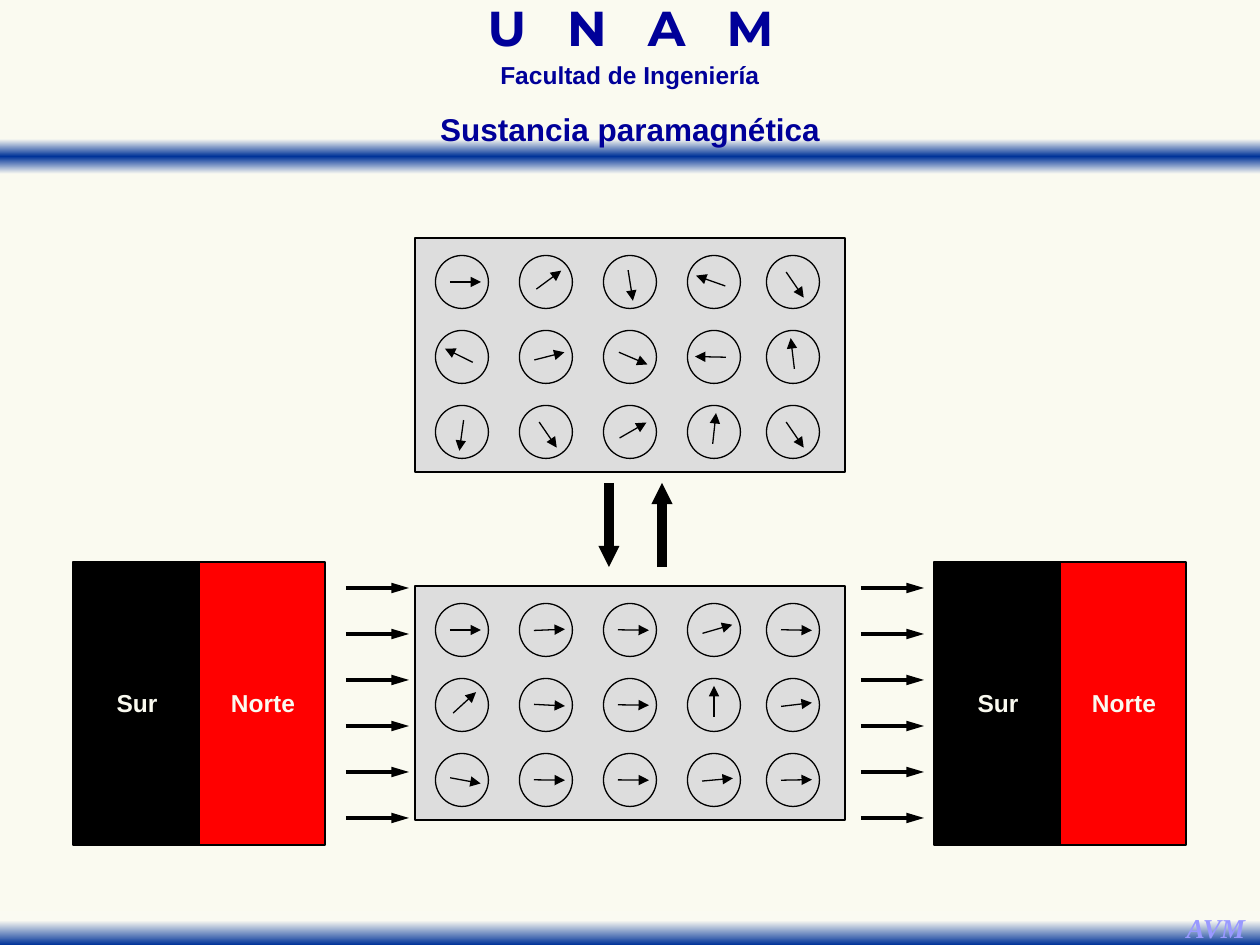
from dataclasses import dataclass
from math import cos, radians, sin

from lxml import etree
from pptx import Presentation
from pptx.dml.color import RGBColor
from pptx.enum.shapes import MSO_CONNECTOR as Connector, MSO_SHAPE as Preset
from pptx.enum.text import PP_ALIGN as Align
from pptx.oxml import parse_xml
from pptx.oxml.ns import nsdecls, qn
from pptx.util import Pt

SCALE = 914400 / 126


@dataclass(frozen=True)
class Theme:
    background: str = "FAFAF0"
    band_light: str = "FAFAF2"
    band_dark: str = "003399"
    heading: str = "000099"
    signature: str = "9999FF"
    ink: str = "000000"
    north: str = "FF0000"
    panel: str = "DDDDDD"
    sans: str = "Arial"
    display: str = "Montserrat"
    serif: str = "Times New Roman"
    display_size: float = 28
    title_size: float = 18
    label_size: float = 14
    signature_size: float = 15.6
    thin: float = 0.75
    medium: float = 2
    thick: float = 6


THEME = Theme()
COLUMNS = (462, 546, 630, 714, 793)
ROW_OFFSETS = (44, 119, 194)
DISORDERED = ((0, 323.5, 81, 199.6, 55.6),
              (206.3, 345.8, 23.2, 181.2, 263.2),
              (97.9, 55.6, 330.1, 276.2, 55.6))
ALIGNED = ((0, 357.7, 0.8, 343.8, 1.1),
           (317.6, 3, 0.7, 270, 353.2),
           (10.5, 0.7, 0.5, 354.9, 359))


def emu(*pixels):
    return [round(value * SCALE) for value in pixels]


def rgb(color):
    return RGBColor.from_string(color)


def add_box(slide, preset, bounds, color):
    shape = slide.shapes.add_shape(preset, *emu(*bounds))
    shape.shadow.inherit = False
    shape.fill.solid()
    shape.fill.fore_color.rgb = rgb(color)
    shape.line.color.rgb = rgb(THEME.ink)
    shape.line.width = Pt(THEME.thin)
    return shape


def add_band(slide, bounds, stops):
    shape = add_box(slide, Preset.RECTANGLE, bounds, THEME.band_light)
    shape.line.fill.background()
    stop_xml = "".join(
        f'<a:gs pos="{position * 1000}"><a:srgbClr val="{color}"/></a:gs>'
        for position, color in stops)
    gradient = parse_xml(
        f'<a:gradFill {nsdecls("a")}><a:gsLst>{stop_xml}</a:gsLst>'
        '<a:lin ang="5400000" scaled="0"/></a:gradFill>')
    properties = shape.element.spPr
    properties.replace(properties.find(qn("a:solidFill")), gradient)


def add_arrow(slide, start, end, width, head_width="med", head_length="med"):
    connector = slide.shapes.add_connector(
        Connector.STRAIGHT, *emu(*start, *end))
    connector.line.color.rgb = rgb(THEME.ink)
    connector.line.width = Pt(width)
    properties = connector.element.spPr
    etree.SubElement(properties.find(qn("a:ln")), qn("a:tailEnd"),
                     type="triangle", w=head_width, len=head_length)
    etree.SubElement(properties, qn("a:effectLst"))


def add_text(slide, bounds, runs, size, color, font=THEME.sans,
             spacing=None, inset=True, wrap=True, italic=False):
    frame = slide.shapes.add_textbox(*emu(*bounds)).text_frame
    frame.word_wrap = wrap
    if not inset:
        frame.margin_left = frame.margin_right = 0
        frame.margin_top = frame.margin_bottom = 0
    paragraph = frame.paragraphs[0]
    paragraph.alignment = Align.CENTER
    if spacing:
        paragraph.line_spacing = spacing
    for text, tracking in runs:
        run = paragraph.add_run()
        run.text = text
        run.font.name = font
        run.font.size = Pt(size)
        run.font.bold = True
        run.font.italic = italic
        run.font.color.rgb = rgb(color)
        if tracking:
            run.font._element.set("spc", str(tracking))


def add_dipole(slide, x, y, angle):
    add_box(slide, Preset.OVAL, (x - 26.5, y - 26.5, 53, 53), THEME.panel)
    across, down = cos(radians(angle)), sin(radians(angle))
    add_arrow(slide, (x - 12 * across, y - 12 * down),
              (x + 19 * across, y + 19 * down), THEME.thin)


def add_panel(slide, top, angles):
    add_box(slide, Preset.RECTANGLE, (415, top, 430, 234), THEME.panel)
    for offset, row in zip(ROW_OFFSETS, angles):
        for x, angle in zip(COLUMNS, row):
            add_dipole(slide, x, top + offset, angle)


def add_magnet(slide, left):
    poles = (("Sur", THEME.ink, 42, 44), ("Norte", THEME.north, 155, 70))
    for index, (label, color, offset, width) in enumerate(poles):
        add_box(slide, Preset.RECTANGLE, (left + index * 126, 562, 126, 283), color)
        add_text(slide, (left + offset, 688, width, 30), [(label, 0)],
                 THEME.label_size, THEME.background, inset=False, wrap=False)


def add_field(slide, left):
    for index in range(6):
        y = 588 + 46 * index
        add_arrow(slide, (left, y), (left + 63, y), THEME.medium, head_length="lg")


def add_frame(slide):
    light, dark = THEME.band_light, THEME.band_dark
    add_band(slide, (0, 139, 1260, 35), ((0, light), (50, dark), (100, light)))
    add_text(slide, (384, 7, 493, 54), [("U N A ", 780), ("M", 0)],
             THEME.display_size, THEME.heading, font=THEME.display, spacing=0.7)
    add_text(slide, (405, 62, 450, 34), [("Facultad de Ingeniería", 0)],
             THEME.label_size, THEME.heading, spacing=0.7)
    add_band(slide, (0, 911, 1260, 34), ((28, light), (100, dark)))
    add_text(slide, (1173, 905, 86, 46), [("AVM", 0)], THEME.signature_size,
             THEME.signature, font=THEME.serif, wrap=False, italic=True)


def main():
    presentation = Presentation()
    presentation.slide_width, presentation.slide_height = emu(1260, 945)
    slide = presentation.slides.add_slide(presentation.slide_layouts[6])
    slide.background.fill.solid()
    slide.background.fill.fore_color.rgb = rgb(THEME.background)
    add_frame(slide)
    add_panel(slide, 238, DISORDERED)
    for left in (73, 934):
        add_magnet(slide, left)
    for left in (346, 861):
        add_field(slide, left)
    add_panel(slide, 586, ALIGNED)
    for x, start, end in ((609, 483, 567), (662, 567, 483)):
        add_arrow(slide, (x, start), (x, end), THEME.thick, "sm", "sm")
    add_text(slide, (357, 104, 546, 50), [("Sustancia paramagnética", 0)],
             THEME.title_size, THEME.heading)
    presentation.save("out.pptx")


if __name__ == "__main__":
    main()
